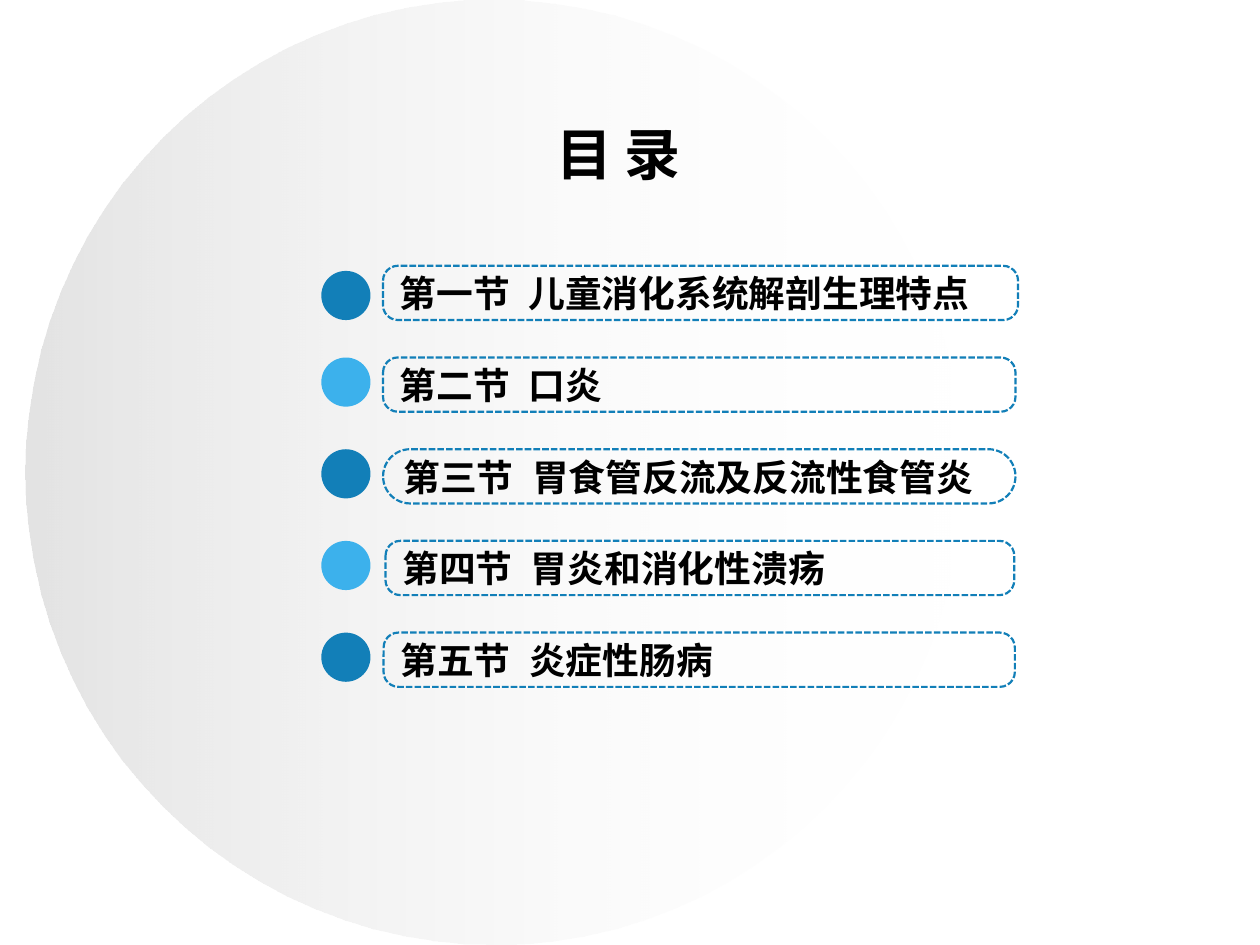
from dataclasses import dataclass

import pptx
import pptx.dml.color
import pptx.enum.dml
import pptx.enum.shapes
import pptx.enum.text
import pptx.oxml
import pptx.oxml.ns
import pptx.util
from pptx.util import Pt

SHAPE = pptx.enum.shapes.MSO_SHAPE
ALIGN = pptx.enum.text.PP_ALIGN
ANCHOR = pptx.enum.text.MSO_ANCHOR
rgb = pptx.dml.color.RGBColor.from_string


@dataclass(frozen=True)
class Theme:
    ink = rgb("000000")
    deep = rgb("127FB8")
    light = rgb("3CB1EC")
    # colour and opacity in percent, from left to right
    backdrop = ((rgb("C0C0C0"), 44), (rgb("FFFFFF"), 0))
    title_font = {"name": "Arial", "size": Pt(32), "bold": True}
    section_font = {"name": "Times New Roman", "size": Pt(21), "bold": True}


THEME = Theme()
FIRST_TOP, PITCH = 151.9, 52.4
DOT_LEFT, DOT_SIZE = 183.6, 28.1
FRAME_HEIGHT = 31
NAME_TAB = 73.5  # three characters and a gap

# number, name, frame left, frame width, corner radius, dot drop
SECTIONS = (
    ("第一节", "儿童消化系统解剖生理特点", 218.9, 362.9, 0.275, 2.9),
    ("第二节", "口炎", 218.9, 361.4, 0.275, 0),
    ("第三节", "胃食管反流及反流性食管炎", 218.9, 361.4, 0.5, 0),
    ("第四节", "胃炎和消化性溃疡", 220.3, 359.3, 0.275, 0),
    ("第五节", "炎症性肠病", 219.2, 360.7, 0.275, 0),
)


def set_values(target, values):
    for attribute, value in values.items():
        setattr(target, attribute, value)


def write(paragraph, text, font_values):
    run = paragraph.add_run()
    run.text = text
    set_values(run.font, font_values)
    run.font.color.rgb = THEME.ink


def add_plain_shape(slide, kind, left, top, width, height):
    shape = slide.shapes.add_shape(kind, Pt(left), Pt(top), Pt(width), Pt(height))
    shape.shadow.inherit = False
    return shape


def add_backdrop(slide):
    """Add the fading circle behind everything else."""
    circle = add_plain_shape(slide, SHAPE.OVAL, 14.4, 0, 535.7, 540)
    circle.line.fill.background()
    circle.fill.gradient()
    circle.fill.gradient_angle = 0
    for stop, (color, _) in zip(circle.fill.gradient_stops, THEME.backdrop):
        stop.color.rgb = color
    stop_colors = circle._element.spPr.iter(pptx.oxml.ns.qn("a:srgbClr"))
    for stop_color, (_, opacity) in zip(stop_colors, THEME.backdrop):
        alpha = stop_color.makeelement(pptx.oxml.ns.qn("a:alpha"), {"val": str(opacity * 1000)})
        stop_color.append(alpha)
    slide.shapes._spTree.insert(2, circle._element)


def add_title(slide, text):
    title = slide.shapes.title
    set_values(title, {"left": Pt(108), "top": Pt(68.4),
                       "width": Pt(491), "height": Pt(38.2)})
    set_values(title.text_frame, {"vertical_anchor": ANCHOR.MIDDLE, "word_wrap": True})
    heading = title.text_frame.paragraphs[0]
    heading.alignment = ALIGN.CENTER
    write(heading, text, THEME.title_font)


def add_dot(slide, top, color):
    dot = add_plain_shape(slide, SHAPE.OVAL, DOT_LEFT, top, DOT_SIZE, DOT_SIZE)
    dot.fill.solid()
    dot.fill.fore_color.rgb = color
    dot.line.fill.background()


def add_tab_stop(paragraph, position):
    properties = paragraph._p.get_or_add_pPr()
    properties.append(pptx.oxml.parse_xml(
        f'<a:tabLst {pptx.oxml.ns.nsdecls("a")}>'
        f'<a:tab pos="{Pt(position)}" algn="l"/></a:tabLst>'))


def add_section_frame(slide, left, top, width, radius, number, name):
    frame = add_plain_shape(slide, SHAPE.ROUNDED_RECTANGLE, left, top, width, FRAME_HEIGHT)
    frame.adjustments[0] = radius
    frame.fill.background()
    frame.line.color.rgb = THEME.deep
    set_values(frame.line, {"width": Pt(1.25),
                            "dash_style": pptx.enum.dml.MSO_LINE.SQUARE_DOT})
    set_values(frame.text_frame, {"vertical_anchor": ANCHOR.MIDDLE, "word_wrap": True})
    label = frame.text_frame.paragraphs[0]
    label.alignment = ALIGN.LEFT
    add_tab_stop(label, NAME_TAB)
    write(label, f"{number}\t{name}", THEME.section_font)


def main():
    deck = pptx.Presentation()
    set_values(deck, {"slide_width": Pt(720), "slide_height": Pt(540)})
    slide = deck.slides.add_slide(deck.slide_layouts.get_by_name("Title Only"))
    add_backdrop(slide)
    add_title(slide, "目 录")
    for row, (number, name, left, width, radius, drop) in enumerate(SECTIONS):
        top = FIRST_TOP + row * PITCH
        add_dot(slide, top + drop, THEME.light if row % 2 else THEME.deep)
        add_section_frame(slide, left, top, width, radius, number, name)
    deck.save("out.pptx")


if __name__ == "__main__":
    main()
